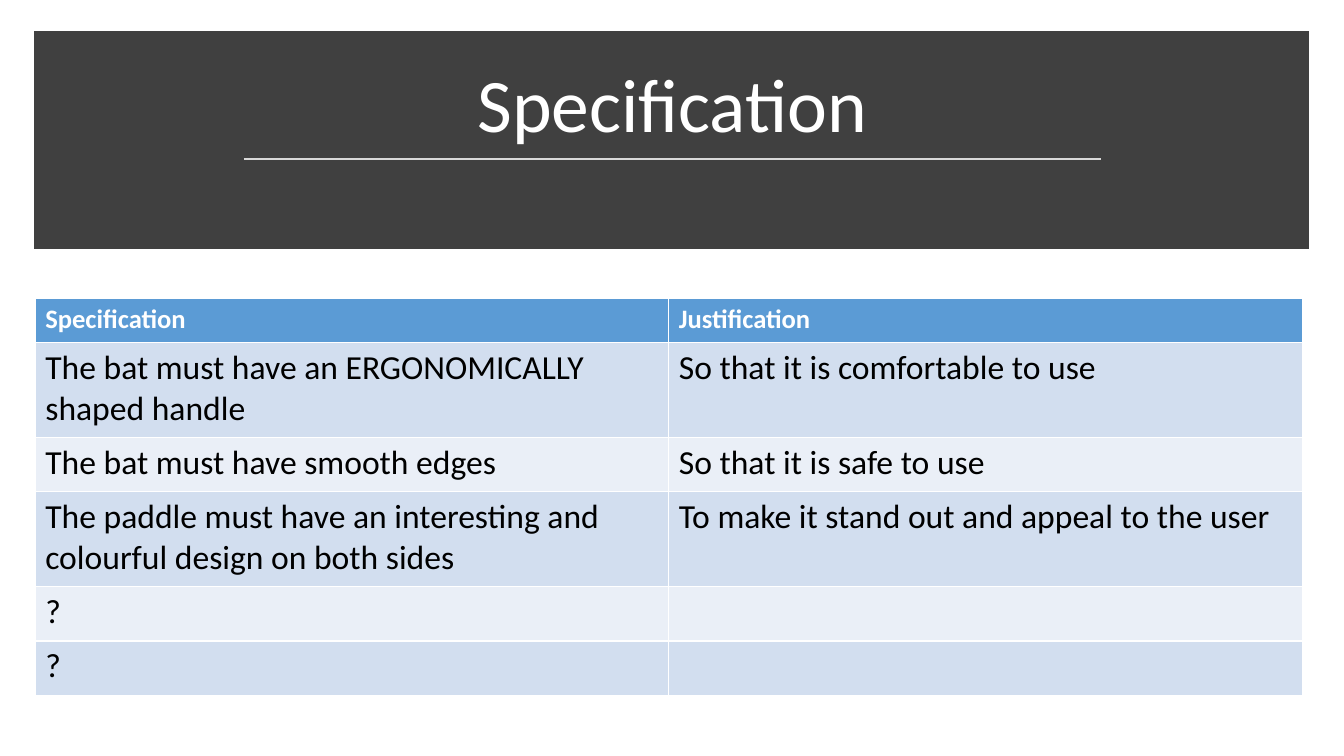
from dataclasses import dataclass

from lxml import etree
from pptx import Presentation
from pptx.dml.color import RGBColor
from pptx.enum import shapes, text
from pptx.oxml import ns
from pptx.util import Pt


@dataclass
class Theme:
    face: str = "Calibri"
    white: str = "FFFFFF"
    black: str = "000000"
    dark: str = "404040"
    rule: str = "D9D9D9"
    head: str = "5B9BD5"
    bands: tuple = ("EAEFF7", "D2DEEF")
    title: int = 54
    label: int = 19
    body: int = 24


theme = Theme()


def style(par, size, color, bold=False):
    for run in par.runs:
        font = run.font
        font.name, font.size, font.bold = theme.face, Pt(size), bold
        font.color.rgb = RGBColor.from_string(color)


deck = Presentation()
deck.slide_width, deck.slide_height = Pt(960), Pt(540)
slide = deck.slides.add_slide(deck.slide_layouts[5])

# Title on a dark band
title = slide.shapes.title
title.left, title.top = Pt(41.76), Pt(36.72)
title.width, title.height = Pt(876.96), Pt(73.44)
frame = title.text_frame
frame.text = "Specification"
frame.vertical_anchor = text.MSO_ANCHOR.BOTTOM
par = frame.paragraphs[0]
par.alignment = text.PP_ALIGN.CENTER
par.line_spacing = 0.9
style(par, theme.title, theme.white)

band = slide.shapes.add_shape(
    shapes.MSO_SHAPE.RECTANGLE, Pt(29.52), Pt(27.36), Pt(900.72), Pt(145.44))
band.shadow.inherit = False
band.fill.solid()
band.fill.fore_color.rgb = RGBColor.from_string(theme.dark)
band.line.color.rgb = RGBColor.from_string(theme.dark)
band.line.width = Pt(10)
edge = band.element.spPr.find(ns.qn("a:ln"))
etree.SubElement(edge, ns.qn("a:miter"), lim="800000")
title.element.addprevious(band.element)

rule = slide.shapes.add_connector(
    shapes.MSO_CONNECTOR.STRAIGHT, Pt(174.24), Pt(113.76), Pt(786.24), Pt(113.76))
rule.line.color.rgb = RGBColor.from_string(theme.rule)
rule.line.width = Pt(1.75)
etree.SubElement(rule.element.spPr, ns.qn("a:effectLst"))

# Table of requirements, each with its row height
rows = [
    (31.68, "Specification", "Justification"),
    (67.68, "The bat must have an ERGONOMICALLY shaped handle",
     "So that it is comfortable to use"),
    (38.88, "The bat must have smooth edges", "So that it is safe to use"),
    (67.68, "The paddle must have an interesting and colourful design on both sides",
     "To make it stand out and appeal to the user"),
    (38.88, "?", ""),
    (38.88, "?", ""),
]
high = sum(row[0] for row in rows)
table = slide.shapes.add_table(
    len(rows), 2, Pt(25.2), Pt(213.12), Pt(905.04), Pt(high)).table
for r, (tall, *words) in enumerate(rows):
    table.rows[r].height = Pt(tall)
    for c, word in enumerate(words):
        cell = table.cell(r, c)
        cell.text_frame.text = word
        cell.fill.solid()
        fill = theme.bands[r % 2] if r else theme.head
        cell.fill.fore_color.rgb = RGBColor.from_string(fill)
        par = cell.text_frame.paragraphs[0]
        if r:
            style(par, theme.body, theme.black)
        else:
            style(par, theme.label, theme.white, True)

deck.save("out.pptx")
